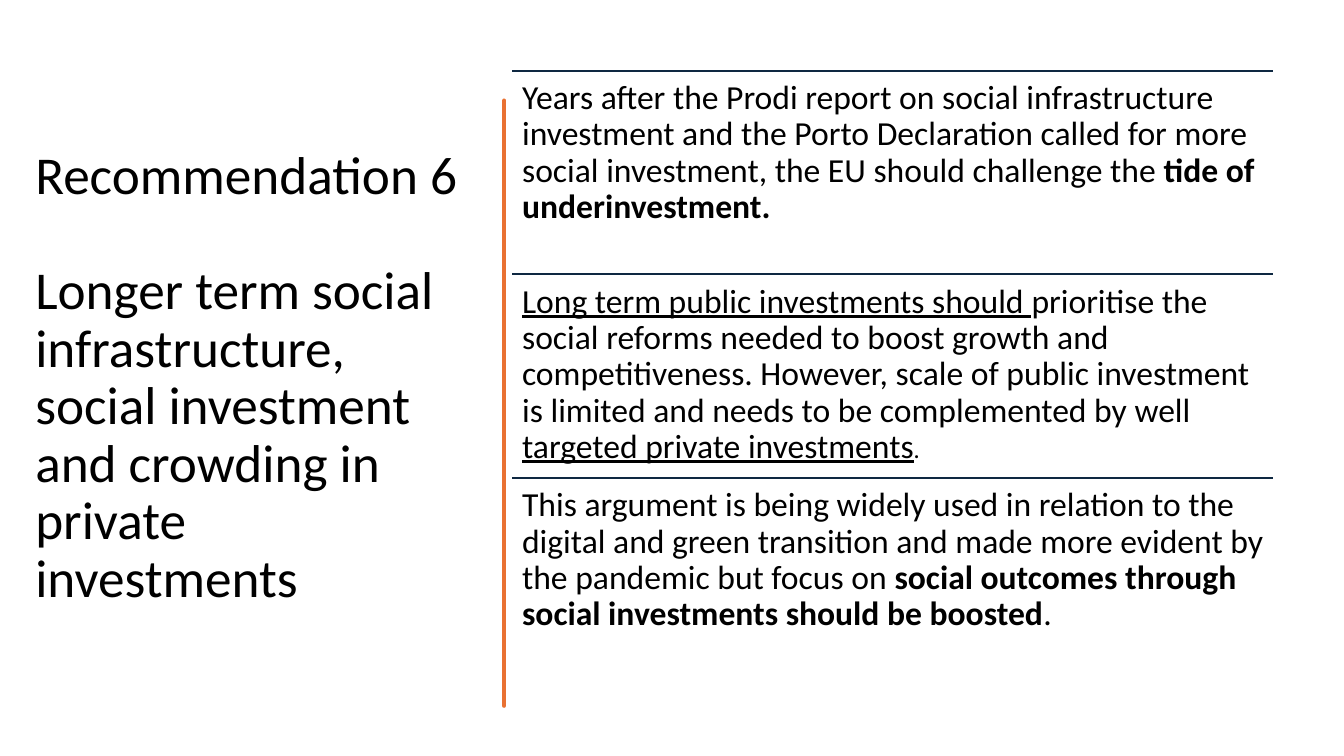
from pptx import Presentation
from pptx.dml.color import RGBColor
from pptx.enum.shapes import MSO_CONNECTOR
from pptx.enum.text import MSO_ANCHOR, MSO_AUTO_SIZE, PP_ALIGN
from pptx.oxml.ns import qn
from pptx.util import Inches, Pt

STRAIGHT = MSO_CONNECTOR.STRAIGHT
TOP, MIDDLE = MSO_ANCHOR.TOP, MSO_ANCHOR.MIDDLE
LEFT = PP_ALIGN.LEFT
NO_FIT = MSO_AUTO_SIZE.NONE

BLACK, NAVY, ORANGE = "000000", "0E2841", "E97132"
MARGIN_TOP = 0.7
COLUMN_LEFT, COLUMN_WIDTH = 5.08, 7.55
ROW_HEIGHT = 2.02


def color(value):
    return RGBColor.from_string(value)


def write(frame, paragraphs, size, anchor=TOP, gap=0):
    """Fill a frame with paragraphs, each a list of (text, font overrides)."""
    frame.word_wrap = True
    frame.auto_size = NO_FIT
    frame.vertical_anchor = anchor
    for index, spans in enumerate(paragraphs):
        para = frame.add_paragraph() if index else frame.paragraphs[0]
        para.alignment = LEFT
        para.line_spacing = 0.9
        para.space_before = Pt(gap if index else 0)
        for text, style in spans:
            span = para.add_run()
            span.text = text
            font = span.font
            font.name = style.get("name", "Calibri")
            font.size = Pt(style.get("size", size))
            font.bold = style.get("bold", False)
            font.underline = style.get("underline", False)
            font.color.rgb = color(BLACK)


deck = Presentation()
deck.slide_width, deck.slide_height = Inches(13.33), Inches(7.5)
page = deck.slides.add_slide(deck.slide_layouts[5])

# Title on the left, its two parts one line apart
title = page.shapes.title
title.left, title.top = Inches(0.25), Inches(MARGIN_TOP)
title.width, title.height = Inches(4.42), Inches(6.11)
write(title.text_frame, [
    [("Recommendation 6", {})],
    [("Longer term social infrastructure, social investment "
      "and crowding in private investments", {})],
], size=38, anchor=MIDDLE, gap=41.7)

# Hand-drawn divider: down the right edge, back up the left edge
right_edge = [(4.75, 0.84), (4.77, 1.15), (4.75, 1.52), (4.76, 1.79),
              (4.75, 2.26), (4.75, 2.94), (4.76, 3.25), (4.75, 3.56),
              (4.77, 3.9), (4.75, 4.36), (4.73, 4.7), (4.75, 5.1),
              (4.77, 5.47), (4.75, 5.84), (4.75, 6.76)]
left_edge = [(4.73, 6.76), (4.72, 6.44), (4.73, 6.13), (4.73, 5.57),
             (4.72, 5.1), (4.73, 4.77), (4.72, 4.45), (4.74, 4.15),
             (4.72, 3.6), (4.73, 3.35), (4.72, 2.9), (4.73, 2.5),
             (4.74, 2.1), (4.72, 1.7), (4.74, 1.2), (4.73, 0.84)]
outline = right_edge + left_edge
builder = page.shapes.build_freeform(*outline[0], scale=Inches(1))
builder.add_line_segments(outline[1:], close=True)
divider = builder.convert_to_shape()
divider.shadow.inherit = False
divider.fill.solid()
divider.fill.fore_color.rgb = color(ORANGE)
divider.line.color.rgb = color(ORANGE)
divider.line.width = Pt(3.25)

# Three equal rows on the right, each under a rule
bold, underline = {"bold": True}, {"underline": True}
arguments = [
    [("Years after the Prodi report on social infrastructure investment and "
      "the Porto Declaration called for more social investment, the EU "
      "should challenge the ", {}),
     ("tide of underinvestment.", bold)],
    [("Long term public investments should ", underline),
     ("prioritise the social reforms needed to boost growth and "
      "competitiveness. However, scale of public investment is limited and "
      "needs to be complemented by well ", {}),
     ("targeted private investments", underline),
     (".", {"name": "Lato", "size": 17})],
    [("This argument is being widely used in relation to the digital and "
      "green transition and made more evident by the pandemic but focus on ",
      {}),
     ("social outcomes through social investments should be boosted", bold),
     (".", {})],
]
left, width = Inches(COLUMN_LEFT), Inches(COLUMN_WIDTH)
for row, spans in enumerate(arguments):
    top = Inches(MARGIN_TOP + row * ROW_HEIGHT)
    rule = page.shapes.add_connector(STRAIGHT, left, top, left + width, top)
    rule.line.color.rgb = color(NAVY)
    rule.line.width = Pt(1.5)
    properties = rule._element.spPr
    properties.append(properties.makeelement(qn("a:effectLst"), {}))

    box = page.shapes.add_textbox(left, top, width, Inches(ROW_HEIGHT))
    frame = box.text_frame
    frame.margin_left = frame.margin_right = Inches(0.1)
    frame.margin_top = frame.margin_bottom = Inches(0.1)
    write(frame, [spans], size=24)

deck.save("out.pptx")
